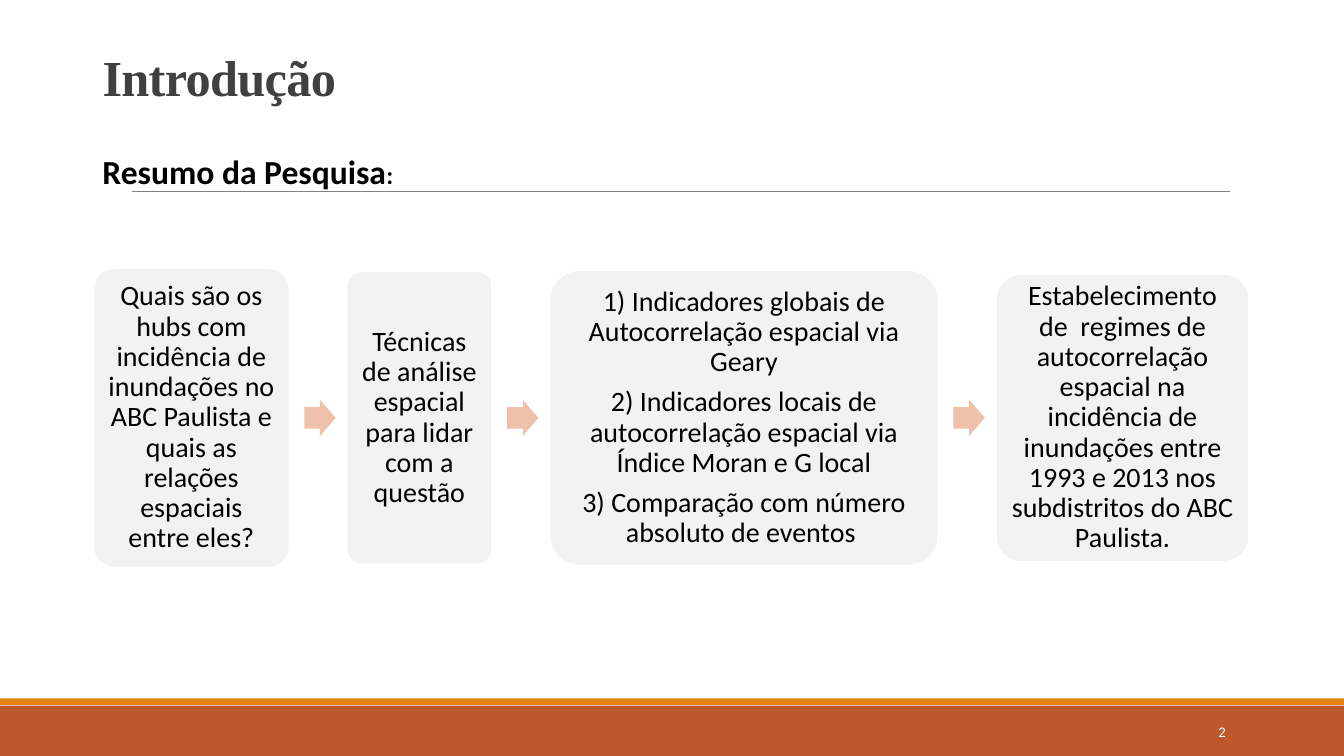
from lxml import etree
from pptx import Presentation
from pptx.dml.color import RGBColor
from pptx.enum.shapes import MSO_CONNECTOR, MSO_SHAPE
from pptx.enum.text import MSO_ANCHOR, MSO_AUTO_SIZE, PP_ALIGN
from pptx.oxml.ns import qn
from pptx.util import Cm, Pt

RECTANGLE = MSO_SHAPE.RECTANGLE
ROUNDED = MSO_SHAPE.ROUNDED_RECTANGLE
ARROW = MSO_SHAPE.RIGHT_ARROW
STRAIGHT = MSO_CONNECTOR.STRAIGHT
MIDDLE = MSO_ANCHOR.MIDDLE
BOTTOM = MSO_ANCHOR.BOTTOM
LEFT, CENTER, RIGHT = PP_ALIGN.LEFT, PP_ALIGN.CENTER, PP_ALIGN.RIGHT

COLORS = {
    "rust": "BD582C", "orange": "E48312", "rule": "808080", "title": "404040",
    "card": "F2F2F2", "arrow": "EFC1AB", "text": "000000", "white": "FFFFFF",
}


def write(para, text, size=20, font="Calibri", color="text", bold=False,
          align=LEFT, line_spacing=1.0, space_after=0):
    para.alignment = align
    para.line_spacing = line_spacing
    para.space_before = Pt(0)
    para.space_after = Pt(space_after)
    span = para.add_run()
    span.text = text
    span.font.size = Pt(size)
    span.font.name = font
    span.font.bold = bold
    span.font.color.rgb = RGBColor.from_string(COLORS[color])
    return span


def add_filled(kind, left, top, width, height, color):
    shape = page.shapes.add_shape(kind, Cm(left), Cm(top), Cm(width), Cm(height))
    shape.shadow.inherit = False
    shape.fill.solid()
    shape.fill.fore_color.rgb = RGBColor.from_string(COLORS[color])
    shape.line.fill.background()
    return shape


deck = Presentation()
deck.slide_width, deck.slide_height = Cm(33.87), Cm(19.05)
page = deck.slides.add_slide(deck.slide_layouts[5])

add_filled(RECTANGLE, 0, 17.78, 33.87, 1.27, "rust")
add_filled(RECTANGLE, 0, 17.6, 33.87, 0.17, "orange")

rule = page.shapes.add_connector(STRAIGHT, Cm(3.33), Cm(4.82), Cm(31), Cm(4.82))
rule.line.color.rgb = RGBColor.from_string(COLORS["rule"])
rule.line.width = Pt(0.5)
etree.SubElement(rule._element.spPr, qn("a:effectLst"))

title = page.shapes.title
title.left, title.top, title.width, title.height = Cm(2.33), Cm(-0.86), Cm(29.2), Cm(3.68)
title.text_frame.vertical_anchor = BOTTOM
title.text_frame.auto_size = MSO_AUTO_SIZE.NONE
heading = write(title.text_frame.paragraphs[0], "Introdução", size=36,
                font="Times New Roman", color="title", bold=True, line_spacing=0.85)
heading.font._element.set("spc", "-50")

steps = [
    (4.93, 7.54, ["Quais são os hubs com incidência de inundações no ABC Paulista "
                  "e quais as relações espaciais entre eles?"]),
    (3.66, 7.39, ["Técnicas de análise espacial para lidar com a questão"]),
    (9.8, 7.44, ["1) Indicadores globais de Autocorrelação espacial via Geary",
                 "2) Indicadores locais de autocorrelação espacial via Índice Moran e G local",
                 "3) Comparação com número absoluto de eventos "]),
    (6.38, 7.26, ["Estabelecimento de  regimes de autocorrelação espacial na incidência "
                  "de inundações entre 1993 e 2013 nos subdistritos do ABC Paulista."]),
]
center_y, gap, arrow_width, arrow_height = 10.53, 1.45, 0.79, 0.91
left = 2.36
for index, (width, height, texts) in enumerate(steps):
    if index:
        arrow = add_filled(ARROW, left - gap + 0.38, center_y - arrow_height / 2,
                           arrow_width, arrow_height, "arrow")
        arrow.adjustments[0] = 0.6
        arrow.adjustments[1] = 0.5
    card = add_filled(ROUNDED, left, center_y - height / 2, width, height, "card")
    card.adjustments[0] = 0.1
    card.line.color.rgb = RGBColor.from_string(COLORS["white"])
    card.line.width = Pt(1.25)
    frame = card.text_frame
    frame.word_wrap = True
    frame.vertical_anchor = MIDDLE
    frame.margin_left = frame.margin_right = Cm(0.2)
    frame.margin_top = frame.margin_bottom = Cm(0.2)
    for position, text in enumerate(texts):
        para = frame.add_paragraph() if position else frame.paragraphs[0]
        write(para, text, align=CENTER, line_spacing=0.9, space_after=7)
    left += width + gap

number_box = page.shapes.add_textbox(Cm(27.51), Cm(17.93), Cm(3.63), Cm(1.02))
number_box.text_frame.word_wrap = True
number_box.text_frame.vertical_anchor = MIDDLE
write(number_box.text_frame.paragraphs[0], "2", size=10.5, color="white", align=RIGHT)

summary_box = page.shapes.add_textbox(Cm(2.33), Cm(3.68), Cm(8.38), Cm(1.27))
summary_box.text_frame.word_wrap = True
summary = summary_box.text_frame.paragraphs[0]
write(summary, "Resumo da Pesquisa", size=24, bold=True)
write(summary, ":", size=18, bold=True)

deck.save("out.pptx")
